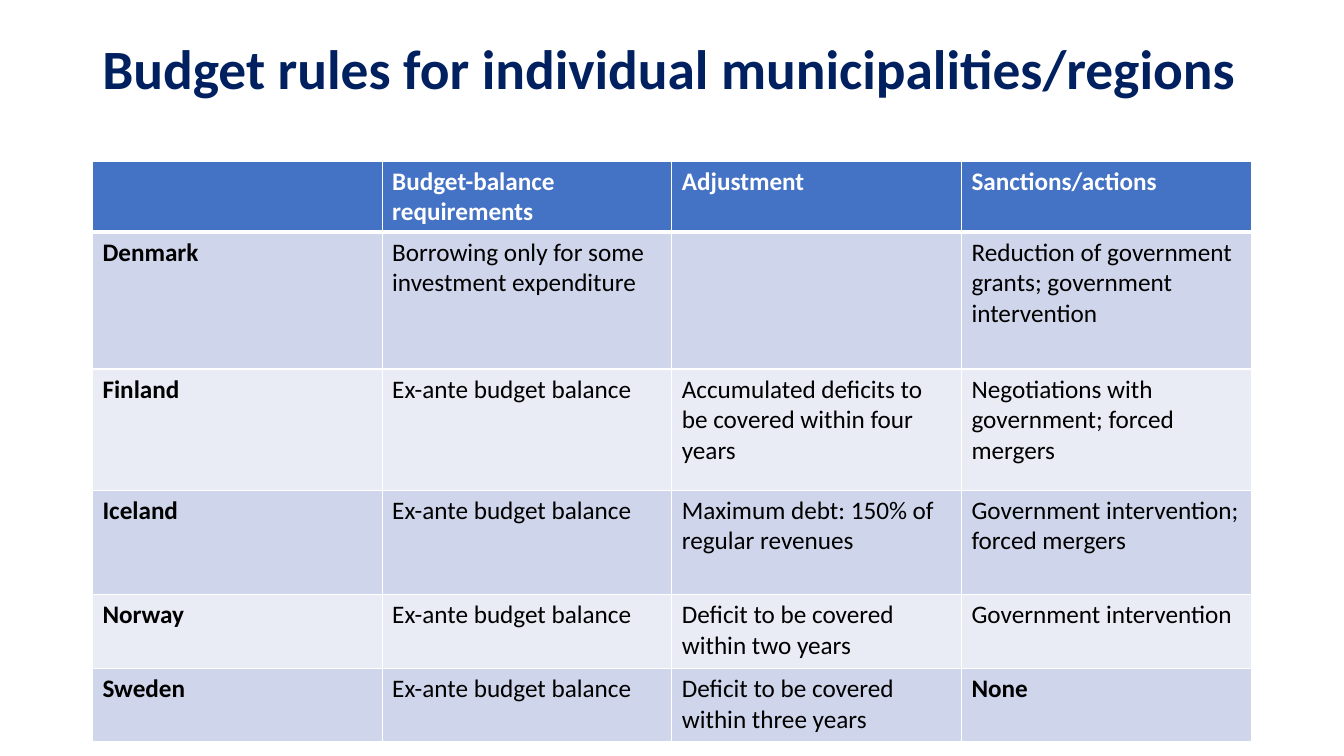
from lxml import etree
from pptx import Presentation
from pptx.dml.color import RGBColor
from pptx.enum import text
from pptx.oxml import ns
from pptx.util import Cm, Pt

TITLE = "Budget rules for individual municipalities/regions"
HEADER = ("", "Budget-balance requirements", "Adjustment", "Sanctions/actions")
BALANCE = "Ex-ante budget balance"
COUNTRIES = [
    ("Denmark", "Borrowing only for some investment expenditure", "",
     "Reduction of government grants; government intervention"),
    ("Finland", BALANCE, "Accumulated deficits to be covered within four years",
     "Negotiations with government; forced mergers"),
    ("Iceland", BALANCE, "Maximum debt: 150% of regular revenues",
     "Government intervention; forced mergers"),
    ("Norway", BALANCE, "Deficit to be covered within two years",
     "Government intervention"),
    ("Sweden", BALANCE, "Deficit to be covered within three years", "None"),
]
ROW_HEIGHTS = (1.79, 3.45, 3.05, 2.64, 1.85, 1.85)
COLUMN_WIDTH = 7.3
LEFT = 2.33
FONT = "Calibri"
NAVY, BLUE, WHITE, BLACK = "002060", "4472C4", "FFFFFF", "000000"
BANDS = ("CFD5EA", "E9EBF5")


def color(hex_value):
    return RGBColor.from_string(hex_value)


def add_run(paragraph, wording, size, hex_value, bold):
    run = paragraph.add_run()
    run.text = wording
    run.font.name = FONT
    run.font.size = Pt(size)
    run.font.bold = bold
    run.font.color.rgb = color(hex_value)


def add_borders(cell, bottom_width):
    """Draw white lines on all four sides of a table cell."""
    properties = cell._tc.get_or_add_tcPr()
    for side, width in (("L", 1), ("R", 1), ("T", 1), ("B", bottom_width)):
        line = etree.SubElement(properties, ns.qn(f"a:ln{side}"), w=str(Pt(width)))
        fill = etree.SubElement(line, ns.qn("a:solidFill"))
        etree.SubElement(fill, ns.qn("a:srgbClr"), val=WHITE)


def add_title(slide):
    box = slide.shapes.add_textbox(Cm(LEFT), Cm(0.48), Cm(29.21), Cm(2.64))
    frame = box.text_frame
    frame.word_wrap = True
    frame.vertical_anchor = text.MSO_ANCHOR.MIDDLE
    paragraph = frame.paragraphs[0]
    paragraph.line_spacing = 0.9
    add_run(paragraph, TITLE, 39.6, NAVY, True)


def add_rules_table(slide):
    rows = [HEADER] + COUNTRIES
    table = slide.shapes.add_table(
        len(rows), len(HEADER), Cm(LEFT), Cm(4.06),
        Cm(COLUMN_WIDTH * len(HEADER)), Cm(sum(ROW_HEIGHTS))).table
    for column in table.columns:
        column.width = Cm(COLUMN_WIDTH)
    for i, (wordings, height) in enumerate(zip(rows, ROW_HEIGHTS)):
        table.rows[i].height = Cm(height)
        is_header = i == 0
        for j, wording in enumerate(wordings):
            cell = table.cell(i, j)
            add_borders(cell, 3 if is_header else 1)
            cell.fill.solid()
            cell.fill.fore_color.rgb = color(BLUE if is_header else BANDS[(i - 1) % 2])
            if wording:
                bold = is_header or j == 0 or wording == "None"
                add_run(cell.text_frame.paragraphs[0], wording, 18,
                        WHITE if is_header else BLACK, bold)


def main():
    presentation = Presentation()
    presentation.slide_width = Cm(33.87)
    presentation.slide_height = Cm(19.05)
    slide = presentation.slides.add_slide(presentation.slide_layouts[6])
    add_title(slide)
    add_rules_table(slide)
    presentation.save("out.pptx")


if __name__ == "__main__":
    main()
